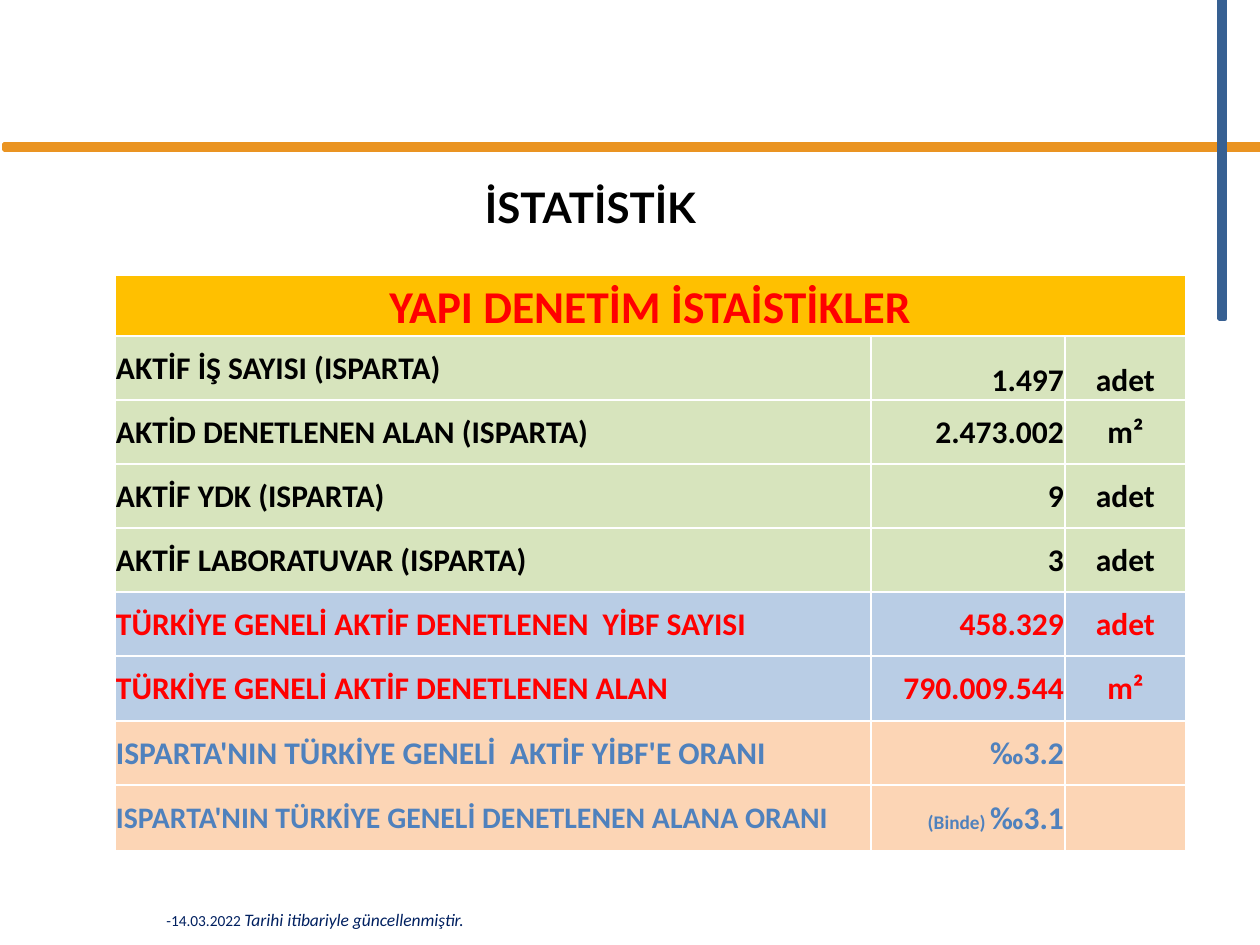
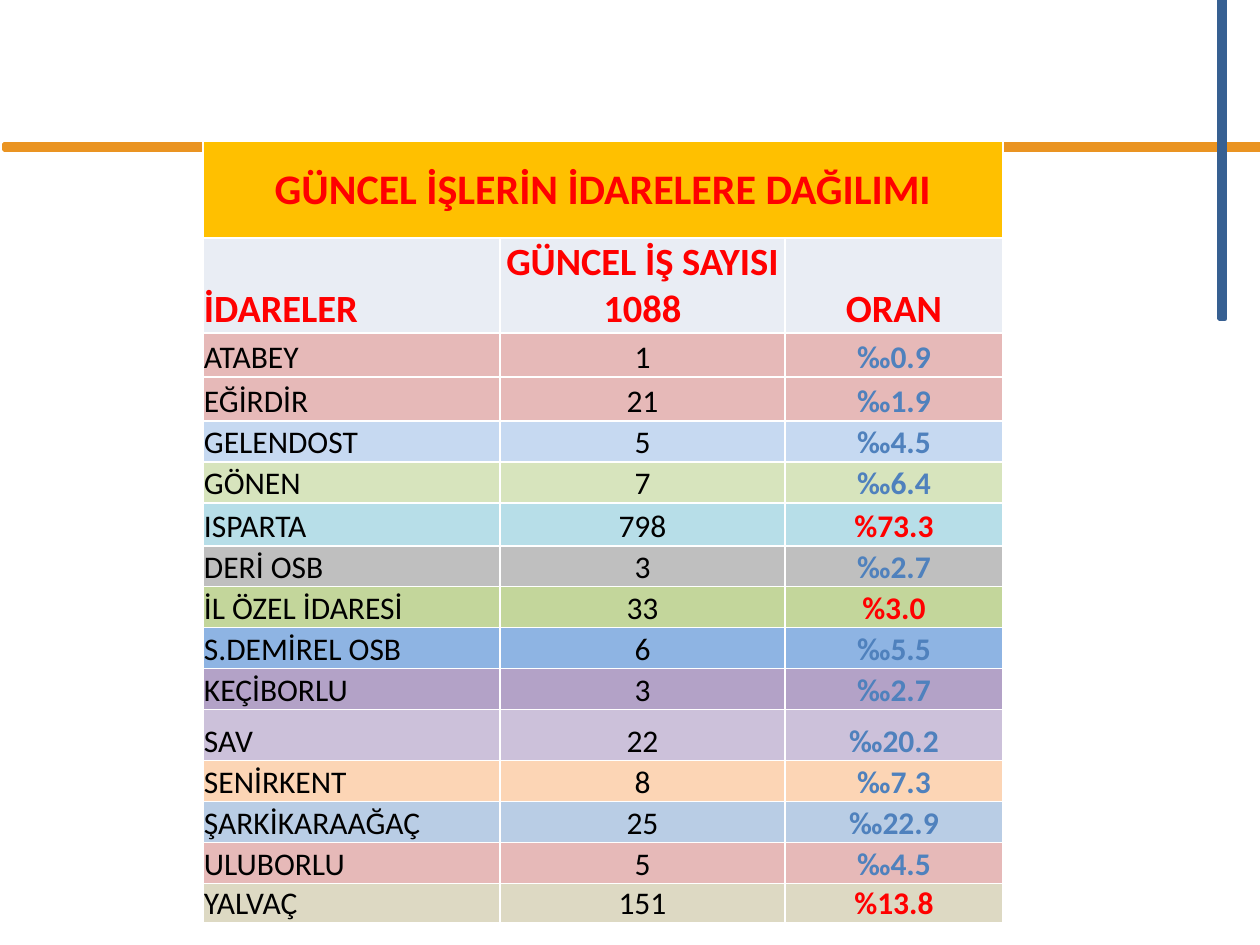
import pptx
import pptx.dml.color
import pptx.enum.shapes
import pptx.enum.text
import pptx.util

PX = 7257  # EMU in one pixel, 126 pixels to the inch
RED, BLACK, BLUE, NAVY = "FF0000", "000000", "4F81BD", "002060"
AMBER, GREEN, ICE, PEACH, ROSE = "FFC000", "D7E4BD", "B9CDE5", "FCD5B5", "E6B9B8"

color = pptx.dml.color.RGBColor.from_string
ALIGN = pptx.enum.text.PP_ALIGN
ANCHOR = pptx.enum.text.MSO_ANCHOR


def write(paragraph, text, size, ink, **formats):
    """Append a run with its font size, colour and other font settings."""
    run = paragraph.add_run()
    run.text = text
    settings = {"name": "Calibri", "size": pptx.util.Pt(size), **formats}
    for name, value in settings.items():
        setattr(run.font, name, value)
    run.font.color.rgb = color(ink)


def add_filled_table(slide, left, top, widths, heights, fills, alignments):
    """Add a table with one fill per row and a merged heading row."""
    frame = slide.shapes.add_table(
        len(heights), len(widths), left * PX, top * PX,
        sum(widths) * PX, sum(heights) * PX)
    table = frame.table
    table.first_row = table.horz_banding = False
    for column, width in zip(table.columns, widths):
        column.width = width * PX
    cell_format = {"margin_left": PX, "margin_right": PX, "margin_top": PX,
                   "margin_bottom": 0, "vertical_anchor": ANCHOR.MIDDLE}
    for row, height, fill in zip(table.rows, heights, fills):
        row.height = height * PX
        for cell, alignment in zip(row.cells, alignments):
            for name, value in cell_format.items():
                setattr(cell, name, value)
            cell.fill.solid()
            cell.fill.fore_color.rgb = color(fill)
            cell.text_frame.paragraphs[0].alignment = alignment
    heading = table.cell(0, 0)
    heading.merge(table.cell(0, len(widths) - 1))
    heading.text_frame.paragraphs[0].alignment = ALIGN.CENTER
    return table


presentation = pptx.Presentation()
presentation.slide_width = 1260 * PX
presentation.slide_height = 945 * PX

# Slide 1: statistics
slide = presentation.slides.add_slide(presentation.slide_layouts[5])

# The two bars belong to the master, so that every slide shows them
bars = [("EA9422", 4, 144, 1256, 6), ("376092", 1219, 0, 6, 319)]
for bar_color, *box in bars:
    bar = slide.shapes.add_shape(
        pptx.enum.shapes.MSO_SHAPE.RECTANGLE, *[length * PX for length in box])
    bar.shadow.inherit = False
    bar.fill.solid()
    bar.fill.fore_color.rgb = color(bar_color)
    bar.line.color.rgb = color(bar_color)
    bar.line.width = pptx.util.Pt(2)
    presentation.slide_master.shapes.element.append(bar.element)

title = slide.shapes.title
title_box = {"left": 452, "top": 175, "width": 277, "height": 63}
for name, length in title_box.items():
    setattr(title, name, length * PX)
title.text_frame.word_wrap = False
title.text_frame.auto_size = pptx.enum.text.MSO_AUTO_SIZE.SHAPE_TO_FIT_TEXT
title.text_frame.paragraphs[0].alignment = ALIGN.CENTER
write(title.text_frame.paragraphs[0], "İSTATİSTİK", 24, BLACK, name="Lato", bold=True)

statistics = [
    (GREEN, BLACK, "AKTİF İŞ SAYISI (ISPARTA)", "1.497", "adet"),
    (GREEN, BLACK, "AKTİD DENETLENEN ALAN (ISPARTA)", "2.473.002", "m²"),
    (GREEN, BLACK, "AKTİF YDK (ISPARTA)", "9", "adet"),
    (GREEN, BLACK, "AKTİF LABORATUVAR (ISPARTA)", "3", "adet"),
    (ICE, RED, "TÜRKİYE GENELİ AKTİF DENETLENEN  YİBF SAYISI", "458.329", "adet"),
    (ICE, RED, "TÜRKİYE GENELİ AKTİF DENETLENEN ALAN", "790.009.544", "m²"),
    (PEACH, BLUE, "ISPARTA'NIN TÜRKİYE GENELİ  AKTİF YİBF'E ORANI", "‰3.2", ""),
    (PEACH, BLUE, "ISPARTA'NIN TÜRKİYE GENELİ DENETLENEN ALANA ORANI", "‰3.1", ""),
]
table = add_filled_table(
    slide, 115, 275, [756, 194, 121], [61, 64, 64, 64, 64, 64, 65, 64, 66],
    [AMBER] + [row[0] for row in statistics],
    [ALIGN.LEFT, ALIGN.RIGHT, ALIGN.CENTER])
write(table.cell(0, 0).text_frame.paragraphs[0],
      "YAPI DENETİM İSTAİSTİKLER", 26, RED, bold=True)
for column in range(3):
    table.cell(0, column).vertical_anchor = ANCHOR.BOTTOM
for column in (1, 2):
    table.cell(1, column).vertical_anchor = ANCHOR.BOTTOM

last = len(statistics)
write(table.cell(last, 1).text_frame.paragraphs[0], "(Binde) ", 11, BLUE, bold=True)
for row, (fill, ink, *texts) in enumerate(statistics, 1):
    for column, text in enumerate(texts):
        if text:
            size = 17 if (row, column) == (last, 0) else 18
            write(table.cell(row, column).text_frame.paragraphs[0],
                  text, size, ink, bold=True)

update_note = slide.shapes.add_textbox(154 * PX, 869 * PX, 512 * PX, 59 * PX)
update_note.text_frame.word_wrap = True
update_note.text_frame.margin_top = 40 * PX
paragraph = update_note.text_frame.paragraphs[0]
write(paragraph, "-14.03.2022 ", 8.8, NAVY)
write(paragraph, "Tarihi itibariyle güncellenmiştir.", 10, NAVY, italic=True)

# Slide 2: jobs by administration
slide = presentation.slides.add_slide(presentation.slide_layouts[6])
administrations = [
    (ROSE, "ATABEY", "1", "‰0.9"),
    (ROSE, "EĞİRDİR", "21", "‰1.9"),
    ("C6D9F1", "GELENDOST", "5", "‰4.5"),
    (GREEN, "GÖNEN", "7", "‰6.4"),
    ("B7DEE8", "ISPARTA", "798", "%73.3"),
    ("BFBFBF", "DERİ OSB", "3", "‰2.7"),
    ("C3D69B", "İL ÖZEL İDARESİ", "33", "%3.0"),
    ("8EB4E3", "S.DEMİREL OSB", "6", "‰5.5"),
    ("B3A2C7", "KEÇİBORLU", "3", "‰2.7"),
    ("CCC1DA", "SAV", "22", "‰20.2"),
    (PEACH, "SENİRKENT", "8", "‰7.3"),
    (ICE, "ŞARKİKARAAĞAÇ", "25", "‰22.9"),
    (ROSE, "ULUBORLU", "5", "‰4.5"),
    ("DDD9C3", "YALVAÇ", "151", "%13.8"),
]
heights = [97, 95, 44, 44, 41, 41, 43, 41, 41, 41, 41, 51, 41, 41, 41, 39]
table = add_filled_table(
    slide, 203, 141, [297, 285, 218], heights,
    [AMBER, "E9EDF4"] + [row[0] for row in administrations],
    [ALIGN.LEFT, ALIGN.CENTER, ALIGN.CENTER])
write(table.cell(0, 0).text_frame.paragraphs[0],
      "GÜNCEL İŞLERİN İDARELERE DAĞILIMI", 24, RED, bold=True)

for column, text in enumerate(["İDARELER", "GÜNCEL İŞ SAYISI 1088", "ORAN"]):
    cell = table.cell(1, column)
    cell.vertical_anchor = ANCHOR.BOTTOM
    write(cell.text_frame.paragraphs[0], text, 22, RED, bold=True)

for row, (fill, *texts) in enumerate(administrations, 2):
    rate_color = BLUE if texts[2].startswith("‰") else RED
    for column, (text, ink) in enumerate(zip(texts, [BLACK, BLACK, rate_color])):
        cell = table.cell(row, column)
        cell.vertical_anchor = ANCHOR.BOTTOM
        write(cell.text_frame.paragraphs[0], text, 18, ink, bold=column == 2)

presentation.save("out.pptx")
